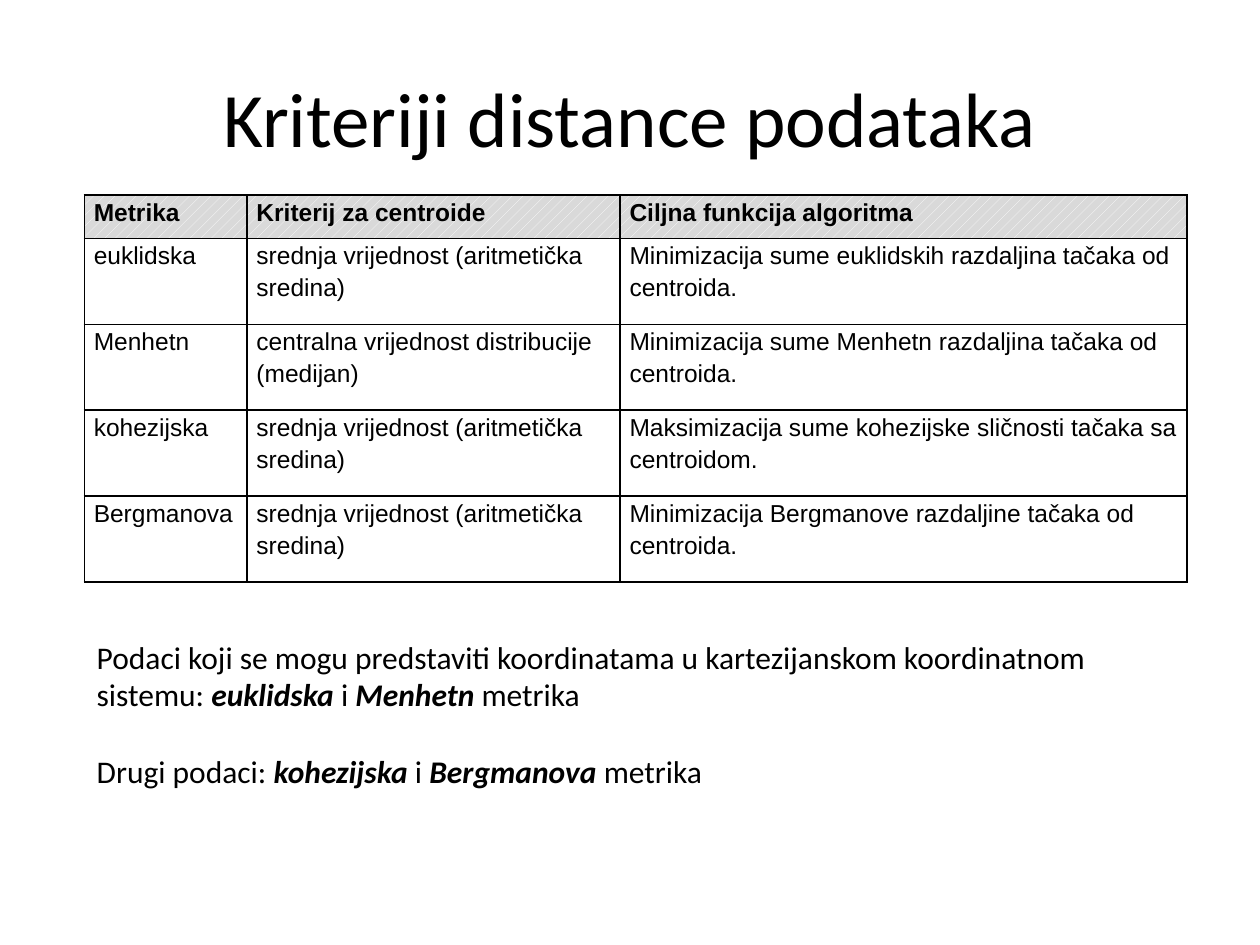
"""Builds a slide on distance criteria with a table and two remarks."""
from dataclasses import dataclass

from lxml import etree
from pptx import Presentation
from pptx.dml.color import RGBColor
from pptx.enum.dml import MSO_PATTERN
from pptx.enum.text import MSO_ANCHOR, PP_ALIGN
from pptx.oxml.ns import qn
from pptx.util import Cm, Pt

MIDDLE = MSO_ANCHOR.MIDDLE
TOP = MSO_ANCHOR.TOP
CENTER = PP_ALIGN.CENTER
LEFT = PP_ALIGN.LEFT
DOTS = MSO_PATTERN.PERCENT_20

BLACK, WHITE, GREY = "000000", "FFFFFF", "D9D9D9"
PLAIN = {"name": "Calibri", "size": Pt(18), "bold": False, "italic": False}
STRONG = {**PLAIN, "bold": True, "italic": True}
TITLE = {**PLAIN, "size": Pt(44)}
BODY = {"name": "Arial", "size": Pt(14), "bold": False}
HEAD = {**BODY, "bold": True}
MARGINS = {"margin_left": Cm(0.19), "margin_right": Cm(0.19),
           "margin_top": 0, "margin_bottom": 0, "vertical_anchor": TOP}
SPACING = {"line_spacing": 1.15, "space_after": Pt(10), "alignment": LEFT}
WIDTHS = (3.28, 7.52, 11.43)
HEIGHTS = (0.88, 1.73, 1.73, 1.73, 1.73)


@dataclass
class Box:
    """Holds a place on the slide in centimetres."""
    left: float
    top: float
    width: float
    height: float

    def place(self) -> list:
        """Gives the place as lengths."""
        return [Cm(v) for v in (self.left, self.top, self.width, self.height)]


@dataclass
class Metric:
    """Holds one table row."""
    name: str
    centre: str
    goal: str

    def texts(self) -> tuple:
        """Gives the cell texts in order."""
        return self.name, self.centre, self.goal


@dataclass
class Remark:
    """Holds a lead and the two metrics it names."""
    lead: str
    first: str
    second: str

    def pieces(self) -> list:
        """Gives the text runs with their formats."""
        return [(self.lead, PLAIN), (self.first, STRONG), (" i ", PLAIN),
                (self.second, STRONG), (" metrika", PLAIN)]


MEAN = "srednja vrijednost (aritmetička sredina)"
METRICS = [
    Metric("Metrika", "Kriterij za centroide", "Ciljna funkcija algoritma"),
    Metric("euklidska", MEAN,
           "Minimizacija sume euklidskih razdaljina tačaka od centroida."),
    Metric("Menhetn", "centralna vrijednost distribucije (medijan)",
           "Minimizacija sume Menhetn razdaljina tačaka od centroida."),
    Metric("kohezijska", MEAN,
           "Maksimizacija sume kohezijske sličnosti tačaka sa centroidom."),
    Metric("Bergmanova", MEAN,
           "Minimizacija Bergmanove razdaljine tačaka od centroida."),
]
REMARKS = [
    Remark("Podaci koji se mogu predstaviti koordinatama u kartezijanskom "
           "koordinatnom sistemu: ", "euklidska", "Menhetn"),
    Remark("Drugi podaci: ", "kohezijska", "Bergmanova"),
]


def paint(color, code: str) -> None:
    """Sets a colour from a hex string."""
    color.rgb = RGBColor.from_string(code)


def apply(target, look: dict) -> None:
    """Sets attributes from a dict of format values."""
    for key, value in look.items():
        setattr(target, key, value)


def write(para, text: str, look: dict) -> None:
    """Adds one formatted run to a paragraph."""
    run = para.add_run()
    run.text = text
    apply(run.font, look)
    paint(run.font.color, BLACK)


def add_frame(slide, box: Box, anchor):
    """Adds a wrapping text box and returns its frame."""
    frame = slide.shapes.add_textbox(*box.place()).text_frame
    apply(frame, {"word_wrap": True, "vertical_anchor": anchor})
    return frame


def add_edges(cell) -> None:
    """Draws thin black borders round a cell."""
    props = cell._tc.get_or_add_tcPr()
    for spot, side in enumerate(("lnL", "lnR", "lnT", "lnB")):
        line = etree.Element(qn("a:" + side), w=str(Pt(1)))
        fill = etree.SubElement(line, qn("a:solidFill"))
        etree.SubElement(fill, qn("a:srgbClr"), val=BLACK)
        props.insert(spot, line)


def fill_cell(cell, text: str, head: bool) -> None:
    """Writes and formats one table cell."""
    apply(cell, MARGINS)
    para = cell.text_frame.paragraphs[0]
    apply(para, SPACING)
    write(para, text, HEAD if head else BODY)
    if head:
        cell.fill.patterned()
        cell.fill.pattern = DOTS
        paint(cell.fill.fore_color, WHITE)
        paint(cell.fill.back_color, GREY)
    else:
        cell.fill.background()
    add_edges(cell)


def add_grid(slide, box: Box) -> None:
    """Adds the table of metrics."""
    table = slide.shapes.add_table(
        len(HEIGHTS), len(WIDTHS), *box.place()).table
    apply(table, {"first_row": False, "horz_banding": False})
    for col, width in zip(table.columns, WIDTHS):
        col.width = Cm(width)
    for i, (row, height, metric) in enumerate(
            zip(table.rows, HEIGHTS, METRICS)):
        row.height = Cm(height)
        for cell, text in zip(row.cells, metric.texts()):
            fill_cell(cell, text, i == 0)


def add_notes(slide, box: Box) -> None:
    """Adds the remarks below the table."""
    frame = add_frame(slide, box, TOP)
    for i, remark in enumerate(REMARKS):
        para = frame.add_paragraph() if i else frame.paragraphs[0]
        para.space_before = Pt(22 if i else 0)
        for text, look in remark.pieces():
            write(para, text, look)


def main() -> None:
    """Builds and saves the slide."""
    deck = Presentation()
    apply(deck, {"slide_width": Cm(25.4), "slide_height": Cm(19.05)})
    slide = deck.slides.add_slide(deck.slide_layouts[6])
    para = add_frame(slide, Box(1.27, 0.76, 22.86, 3.18), MIDDLE).paragraphs[0]
    para.alignment = CENTER
    write(para, "Kriteriji distance podataka", TITLE)
    add_grid(slide, Box(1.7, 3.93, sum(WIDTHS), sum(HEIGHTS)))
    add_notes(slide, Box(1.7, 12.73, 22.2, 3.33))
    deck.save("out.pptx")


if __name__ == "__main__":
    main()
